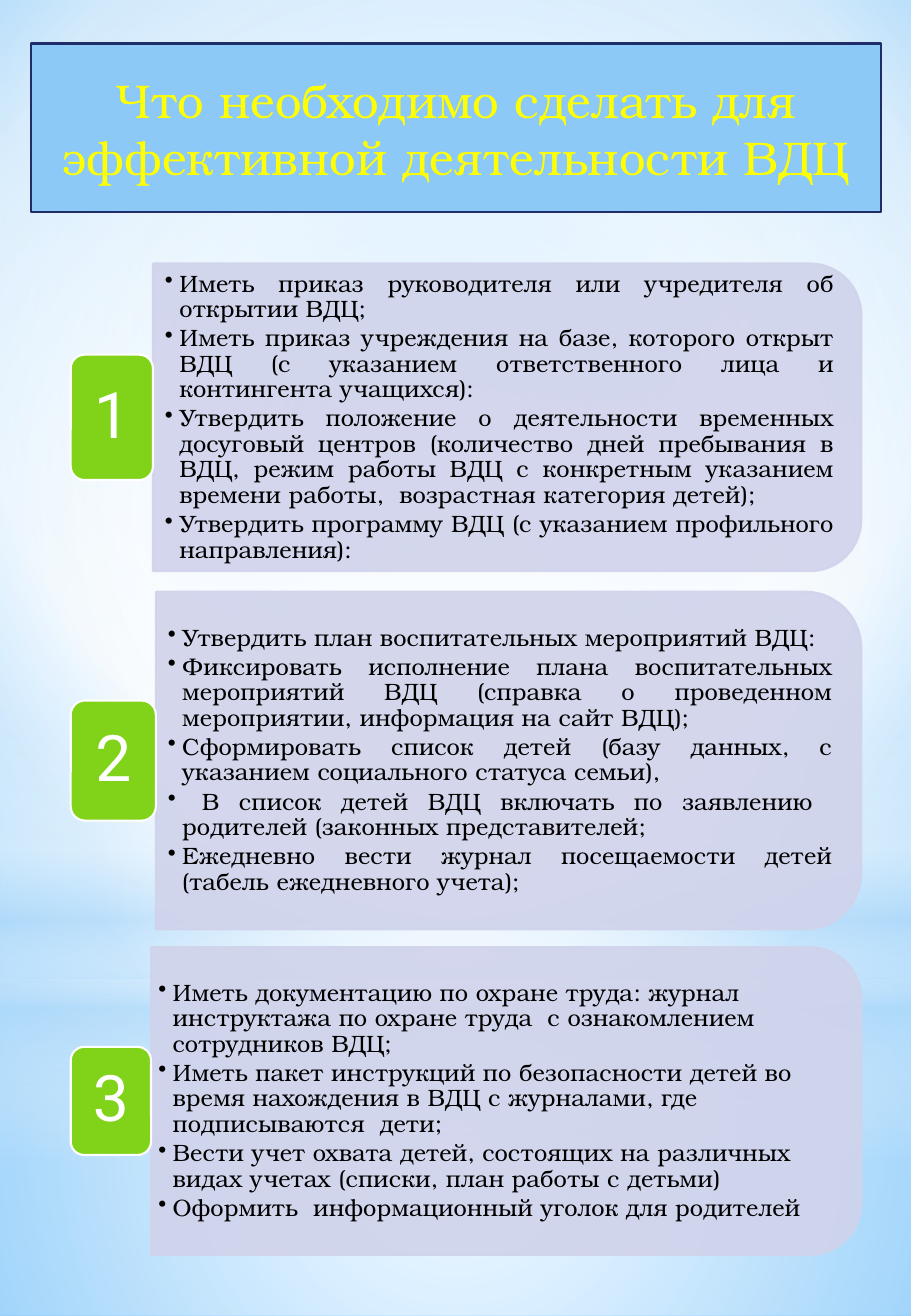
from lxml.etree import SubElement
from pptx import Presentation
from pptx.dml.color import RGBColor
from pptx.enum.shapes import MSO_SHAPE
from pptx.enum.text import MSO_ANCHOR, MSO_AUTO_SIZE, PP_ALIGN
from pptx.oxml import parse_xml
from pptx.oxml.ns import nsdecls, qn
from pptx.util import Cm, Pt

WIDE, HIGH = 19.05, 27.51
SERIF, SANS = "TeX Gyre Bonum", "Roboto"
HUES = {
    "sky": "8CC9F7", "navy": "1F2E69", "yellow": "FFFF00", "lilac": "D0D3EB",
    "green": "81D31A", "white": "FFFFFF", "black": "000000",
    "pale": "B4DCFA", "light": "9ED5FF", "deep": "5BB9FF",
}
MID = (50, 50, 50, 50)
LAYERS = [
    (MSO_SHAPE.RECTANGLE, 20.47, 7.04,
     [(0, "white", 91), (37, "white", 76), (100, "pale", 79)], MID),
    (MSO_SHAPE.RECTANGLE, 0, 20.47,
     [(0, "white", 89), (48, "white", 62), (100, "pale", 79)], MID),
    (MSO_SHAPE.RECTANGLE, 15.11, 9.17,
     [(0, "white", 0), (29, "white", 30), (45, "pale", 40),
      (55, "white", 26), (65, "pale", 60), (100, "white", 0)], None),
    (MSO_SHAPE.OVAL, 6.43, 20.47, [(0, "white", 100), (56, "white", 0)], MID),
]
STEPS = [
    ((3.2, 5.51, 14.81, 6.43), 2.62, PP_ALIGN.JUSTIFY, (0.25, 0.13), [
        "Иметь приказ руководителя или учредителя об открытии ВДЦ;",
        "Иметь приказ учреждения на базе, которого открыт ВДЦ (с указанием ответственного лица и контингента учащихся):",
        "Утвердить положение о деятельности временных досуговый центров (количество дней пребывания в ВДЦ, режим работы ВДЦ с конкретным указанием времени работы,  возрастная категория детей);",
        "Утвердить программу ВДЦ (с указанием профильного направления):",
    ]),
    ((3.26, 12.37, 14.75, 7.06), 2.51, PP_ALIGN.JUSTIFY, (0.25, 0.13), [
        "Утвердить план воспитательных мероприятий ВДЦ:",
        "Фиксировать исполнение плана воспитательных мероприятий ВДЦ (справка о проведенном мероприятии, информация на сайт ВДЦ);",
        "Сформировать список детей (базу данных, с указанием социального статуса семьи),",
        " В список детей ВДЦ включать по заявлению  родителей (законных представителей;",
        "Ежедневно вести журнал посещаемости детей (табель ежедневного учета);",
    ]),
    ((3.16, 19.8, 14.85, 6.43), 2.26, PP_ALIGN.LEFT, (0.15, 0.08), [
        "Иметь документацию по охране труда: журнал инструктажа по охране труда  с ознакомлением  сотрудников ВДЦ;",
        "Иметь пакет инструкций по безопасности детей во время нахождения в ВДЦ с журналами, где подписываются  дети;",
        "Вести учет охвата детей, состоящих на различных видах учетах (списки, план работы с детьми)",
        "Оформить  информационный уголок для родителей",
    ]),
]


def rgb(name):
    return RGBColor.from_string(HUES[name])


def blend(fill, owner, stops, focus):
    marks = "".join(
        f'<a:gs pos="{pos * 1000}"><a:srgbClr val="{HUES[hue]}">'
        f'<a:alpha val="{alpha * 1000}"/></a:srgbClr></a:gs>'
        for pos, hue, alpha in stops)
    if focus:
        sides = " ".join(f'{side}="{part * 1000}"' for side, part in zip("ltrb", focus))
        form = f'<a:path path="circle"><a:fillToRect {sides}/></a:path>'
    else:
        form = '<a:lin ang="5400000" scaled="0"/>'
    fill.solid()
    owner.replace(owner.find(qn("a:solidFill")), parse_xml(
        f'<a:gradFill {nsdecls("a")} rotWithShape="1"><a:gsLst>{marks}</a:gsLst>{form}</a:gradFill>'))


def paint(shape, fill, line):
    shape.fill.solid()
    shape.fill.fore_color.rgb = rgb(fill)
    shape.line.color.rgb = rgb(line)
    shape.line.width = Pt(1.25)


def draw(slide, kind, box):
    shape = slide.shapes.add_shape(kind, *map(Cm, box))
    shape.shadow.inherit = False
    return shape


def write(shape, lines, size=14, font=SERIF, hue="black", align=PP_ALIGN.CENTER,
          inset=(0.25, 0.13), space=0.9, after=0, bullet=False):
    frame = shape.text_frame
    frame.word_wrap = True
    frame.auto_size = MSO_AUTO_SIZE.NONE
    frame.vertical_anchor = MSO_ANCHOR.MIDDLE
    frame.margin_left = frame.margin_right = Cm(inset[0])
    frame.margin_top = frame.margin_bottom = Cm(inset[1])
    for rank, line in enumerate(lines):
        para = frame.add_paragraph() if rank else frame.paragraphs[0]
        para.alignment = align
        para.line_spacing = space
        para.space_before, para.space_after = Pt(0), Pt(after)
        run = para.add_run()
        run.text = line
        run.font.size, run.font.name = Pt(size), font
        run.font.color.rgb = rgb(hue)
        if bullet:
            props = para._p.get_or_add_pPr()
            props.set("marL", str(Cm(0.3)))
            props.set("indent", str(-Cm(0.3)))
            SubElement(props, qn("a:buChar"), char="•")


def backdrop(slide):
    fill = slide.background.fill
    fill.solid()
    blend(fill, slide._element.find(".//" + qn("p:bgPr")),
          [(0, "light", 100), (60, "white", 100), (100, "deep", 100)], (20, 10, 20, 60))
    for kind, top, high, stops, focus in LAYERS:
        layer = draw(slide, kind, (0, top, WIDE, high))
        layer.line.fill.background()
        blend(layer.fill, layer._element.spPr, stops, focus)


def header(slide, box):
    title = slide.shapes.title
    title.left, title.top, title.width, title.height = map(Cm, box)
    props = title._element.spPr
    SubElement(SubElement(props, qn("a:prstGeom"), prst="roundRect"), qn("a:avLst"))
    paint(title, "sky", "navy")
    write(title, ["Что необходимо сделать для эффективной деятельности ВДЦ"],
          size=28, hue="yellow", space=1)
    slide.shapes._spTree.append(title._element)


def step(slide, box, number, tall, align, inset, lines):
    left, top, wide, high = box
    middle = top + high / 2
    panel = draw(slide, MSO_SHAPE.ROUND_2_SAME_RECTANGLE,
                 (left + (wide - high) / 2, middle - wide / 2, high, wide))
    panel.rotation = 90
    paint(panel, "lilac", "lilac")
    for color in panel._element.spPr.iter(qn("a:srgbClr")):
        SubElement(color, qn("a:alpha"), val="90000")
    edge = high * 0.05
    text = slide.shapes.add_textbox(
        *map(Cm, (left, top + edge, wide - edge, high - 2 * edge)))
    write(text, lines, align=align, inset=inset, after=2.1, bullet=True)
    badge = draw(slide, MSO_SHAPE.ROUNDED_RECTANGLE,
                 (1.48, middle - tall / 2, left - 1.48, tall))
    paint(badge, "green", "white")
    write(badge, [str(number)], size=38, font=SANS, hue="white", inset=(0, 0))


def main():
    deck = Presentation()
    deck.slide_width, deck.slide_height = Cm(WIDE), Cm(HIGH)
    slide = deck.slides.add_slide(deck.slide_layouts[5])
    backdrop(slide)
    for number, (box, tall, align, inset, lines) in enumerate(STEPS, 1):
        step(slide, box, number, tall, align, inset, lines)
    header(slide, (0.64, 0.91, 17.78, 3.53))
    deck.save("out.pptx")


if __name__ == "__main__":
    main()
